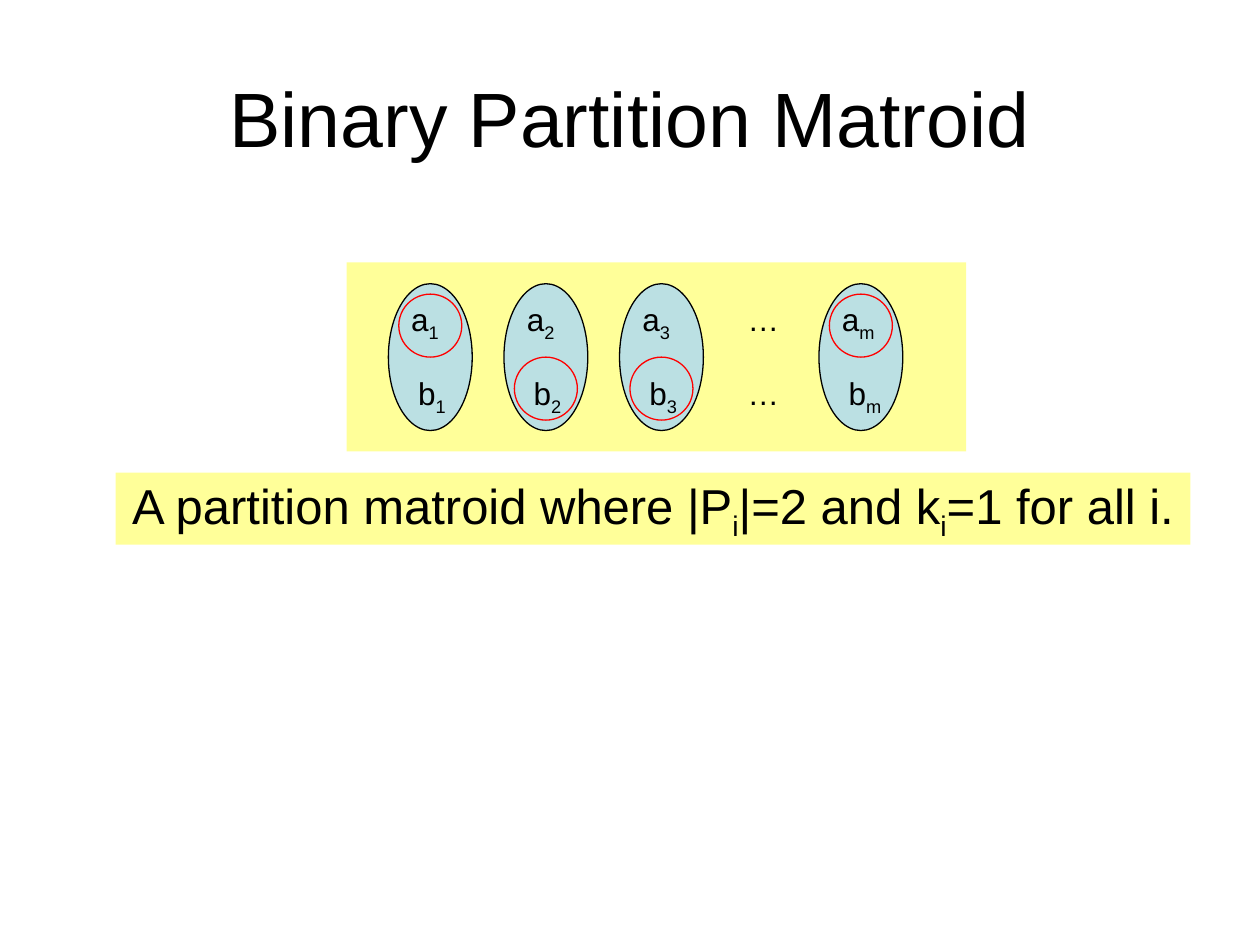
from dataclasses import dataclass

from pptx import Presentation
from pptx.dml.color import RGBColor
from pptx.enum.shapes import MSO_SHAPE
from pptx.enum.text import MSO_ANCHOR, PP_ALIGN
from pptx.util import Cm, Pt

COLORS = {
    "panel": "FFFF99",
    "part": "BBE0E3",
    "outline": "000000",
    "chosen": "FF0000",
    "text": "000000",
}
FRAME_FORMAT = {"word_wrap": False, "vertical_anchor": MSO_ANCHOR.TOP}
CENTERED_FORMAT = {"word_wrap": False, "vertical_anchor": MSO_ANCHOR.MIDDLE}

FIRST_PART_LEFT = 7.83
PART_PITCH = 2.33
UPPER_TOP = 5.93
LOWER_TOP = 7.41
CHOSEN_SIZE = 1.27
CHOSEN_INSET = 0.21
LOWER_INSET = 0.35


@dataclass(frozen=True)
class Part:
    index: str
    left: float
    chosen_top: float


@dataclass(frozen=True)
class Span:
    text: str
    subscript: bool = False


CHOSEN_UPPER = UPPER_TOP
CHOSEN_LOWER = 7.2
PARTS = [
    Part("1", FIRST_PART_LEFT, CHOSEN_UPPER),
    Part("2", FIRST_PART_LEFT + PART_PITCH, CHOSEN_LOWER),
    Part("3", FIRST_PART_LEFT + 2 * PART_PITCH, CHOSEN_LOWER),
    Part("m", 16.51, CHOSEN_UPPER),
]
STATEMENT = [
    Span("A partition matroid where |P"),
    Span("i", True),
    Span("|=2 and k"),
    Span("i", True),
    Span("=1 for all i."),
]


def color(name: str) -> RGBColor:
    return RGBColor.from_string(COLORS[name])


def apply_format(target, values: dict) -> None:
    for name, value in values.items():
        setattr(target, name, value)


def write_spans(para, spans: list[Span], size: float) -> None:
    for span in spans:
        run = para.add_run()
        run.text = span.text
        apply_format(run.font, {"name": "Arial", "size": Pt(size)})
        run.font.color.rgb = color("text")
        if span.subscript:
            run.font._element.set("baseline", "-25000")


def add_figure(shapes, kind, left: float, top: float, width: float,
               height: float, fill: str = "", line: str = ""):
    shape = shapes.add_shape(kind, Cm(left), Cm(top), Cm(width), Cm(height))
    shape.shadow.inherit = False
    if fill:
        shape.fill.solid()
        shape.fill.fore_color.rgb = color(fill)
    else:
        shape.fill.background()
    if line:
        shape.line.color.rgb = color(line)
        shape.line.width = Pt(0.75)
    else:
        shape.line.fill.background()
    return shape


def add_label(shapes, left: float, top: float, spans: list[Span]) -> None:
    box = shapes.add_textbox(Cm(left), Cm(top), Cm(1.5), Cm(1.02))
    apply_format(box.text_frame, FRAME_FORMAT)
    write_spans(box.text_frame.paragraphs[0], spans, 18)


def add_title(page, text: str) -> None:
    title = page.shapes.title
    apply_format(title, {"left": Cm(1.27), "top": Cm(0.76),
                         "width": Cm(22.86), "height": Cm(3.18)})
    title.text_frame.vertical_anchor = MSO_ANCHOR.MIDDLE
    para = title.text_frame.paragraphs[0]
    para.alignment = PP_ALIGN.CENTER
    write_spans(para, [Span(text)], 44)


def add_partition(page) -> None:
    group = page.shapes.add_group_shape().shapes
    for part in PARTS:
        add_figure(group, MSO_SHAPE.OVAL, part.left, 5.72, 1.69, 2.96,
                   fill="part", line="outline")
        index = Span(part.index, True)
        add_label(group, part.left + CHOSEN_INSET, UPPER_TOP, [Span("a"), index])
        add_label(group, part.left + LOWER_INSET, LOWER_TOP, [Span("b"), index])
        add_figure(group, MSO_SHAPE.OVAL, part.left + CHOSEN_INSET,
                   part.chosen_top, CHOSEN_SIZE, CHOSEN_SIZE, line="chosen")
    for top in (UPPER_TOP, LOWER_TOP):
        add_label(group, 14.82, top, [Span("…")])


def add_statement(page) -> None:
    box = add_figure(page.shapes, MSO_SHAPE.RECTANGLE, 2.33, 9.53, 21.67, 1.45,
                     fill="panel")
    apply_format(box.text_frame, CENTERED_FORMAT)
    para = box.text_frame.paragraphs[0]
    apply_format(para, {"alignment": PP_ALIGN.CENTER, "space_before": Pt(5.6)})
    write_spans(para, STATEMENT, 28)


def main() -> None:
    deck = Presentation()
    apply_format(deck, {"slide_width": Cm(25.4), "slide_height": Cm(19.05)})
    page = deck.slides.add_slide(deck.slide_layouts[5])
    add_figure(page.shapes, MSO_SHAPE.RECTANGLE, 6.99, 5.29, 12.49, 3.81,
               fill="panel")
    add_title(page, "Binary Partition Matroid")
    add_partition(page)
    add_statement(page)
    deck.save("out.pptx")


if __name__ == "__main__":
    main()
